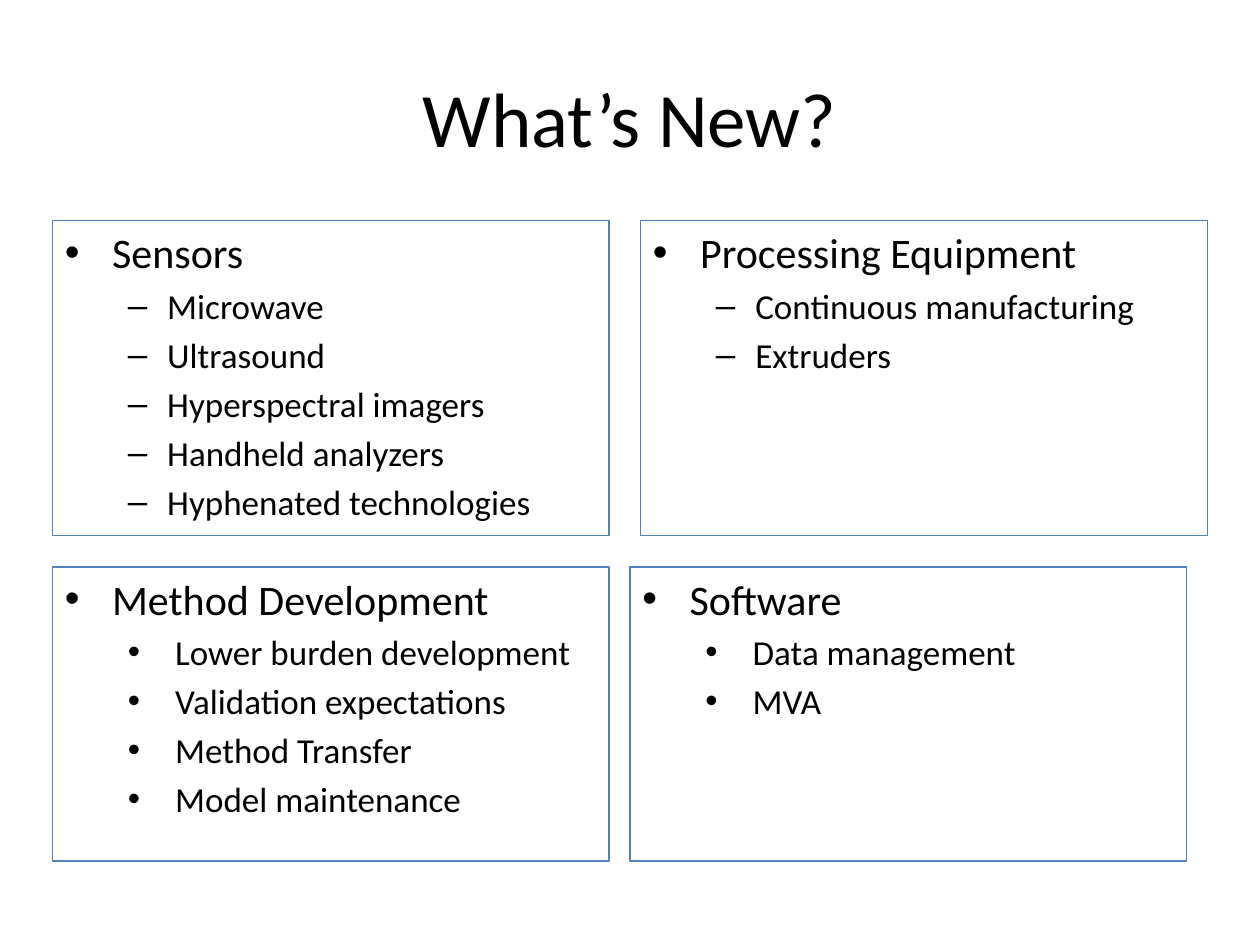
import pptx
import pptx.dml.color
import pptx.enum.shapes
import pptx.enum.text
import pptx.oxml.ns
import pptx.util
from lxml import etree
from pptx.util import Inches

BLACK = pptx.dml.color.RGBColor(0x00, 0x00, 0x00)
BLUE = pptx.dml.color.RGBColor(0x4F, 0x81, 0xBD)
FONT = "Calibri"

# Panel grid in twelfths of an inch
LEFT, TOP_ROW, BOTTOM_ROW = 5 / 12, 1.75, 4.5
PANEL_WIDTH, TOP_HEIGHT, BOTTOM_HEIGHT = 53 / 12, 2.5, 28 / 12

# Bullet styles: character, left margin, hanging indent
HEADING = ("•", 3 / 8, 3 / 8)
DASH = ("–", 13 / 16, 5 / 16)
DOT = ("•", 7 / 8, 3 / 8)

# Panels: box, item bullet style, heading, items
PANELS = [
    ((LEFT, TOP_ROW, PANEL_WIDTH, TOP_HEIGHT), DASH, "Sensors",
     ["Microwave", "Ultrasound", "Hyperspectral imagers",
      "Handheld analyzers", "Hyphenated technologies"]),
    ((61 / 12, TOP_ROW, 4.5, TOP_HEIGHT), DASH, "Processing Equipment",
     ["Continuous manufacturing", "Extruders"]),
    ((5, BOTTOM_ROW, PANEL_WIDTH, BOTTOM_HEIGHT), DOT, "Software",
     ["Data management", "MVA"]),
    ((LEFT, BOTTOM_ROW, PANEL_WIDTH, BOTTOM_HEIGHT), DOT, "Method Development",
     ["Lower burden development", "Validation expectations",
      "Method Transfer", "Model maintenance"]),
]


def format_runs(para, size):
    for span in para.runs:
        span.font.name = FONT
        span.font.size = pptx.util.Pt(size)
        span.font.color.rgb = BLACK


def add_bullet(para, style):
    """Give a paragraph its indent, 20% space before and bullet."""
    mark, margin, hanging = style
    qn = pptx.oxml.ns.qn
    properties = para._p.get_or_add_pPr()
    properties.set("marL", str(Inches(margin)))
    properties.set("indent", str(-Inches(hanging)))
    spacing = etree.SubElement(properties, qn("a:spcBef"))
    etree.SubElement(spacing, qn("a:spcPct")).set("val", "20000")
    etree.SubElement(properties, qn("a:buFont")).set("typeface", "Arial")
    etree.SubElement(properties, qn("a:buChar")).set("char", mark)


def add_title(page, box, text):
    title = page.shapes.add_textbox(*map(Inches, box))
    frame = title.text_frame
    frame.word_wrap = True
    frame.vertical_anchor = pptx.enum.text.MSO_ANCHOR.MIDDLE
    frame.text = text
    para = frame.paragraphs[0]
    para.alignment = pptx.enum.text.PP_ALIGN.CENTER
    format_runs(para, 44)


def add_panel(page, box, item_style, heading, items):
    panel = page.shapes.add_shape(
        pptx.enum.shapes.MSO_SHAPE.RECTANGLE, *map(Inches, box))
    panel.shadow.inherit = False
    panel.fill.background()
    panel.line.color.rgb = BLUE
    panel.line.width = pptx.util.Pt(0.75)

    frame = panel.text_frame
    frame.word_wrap = True
    frame.vertical_anchor = pptx.enum.text.MSO_ANCHOR.TOP
    frame.text = "\n".join([heading, *items])
    for index, para in enumerate(frame.paragraphs):
        para.alignment = pptx.enum.text.PP_ALIGN.LEFT
        para.level = 1 if index else 0
        add_bullet(para, item_style if index else HEADING)
        format_runs(para, 20 if index else 24)


def main():
    deck = pptx.Presentation()
    deck.slide_width, deck.slide_height = Inches(10), Inches(7.5)
    page = deck.slides.add_slide(deck.slide_layouts[6])
    add_title(page, (0.5, 0.3, 9, 1.25), "What’s New?")
    for panel in PANELS:
        add_panel(page, *panel)
    deck.save("out.pptx")


if __name__ == "__main__":
    main()
